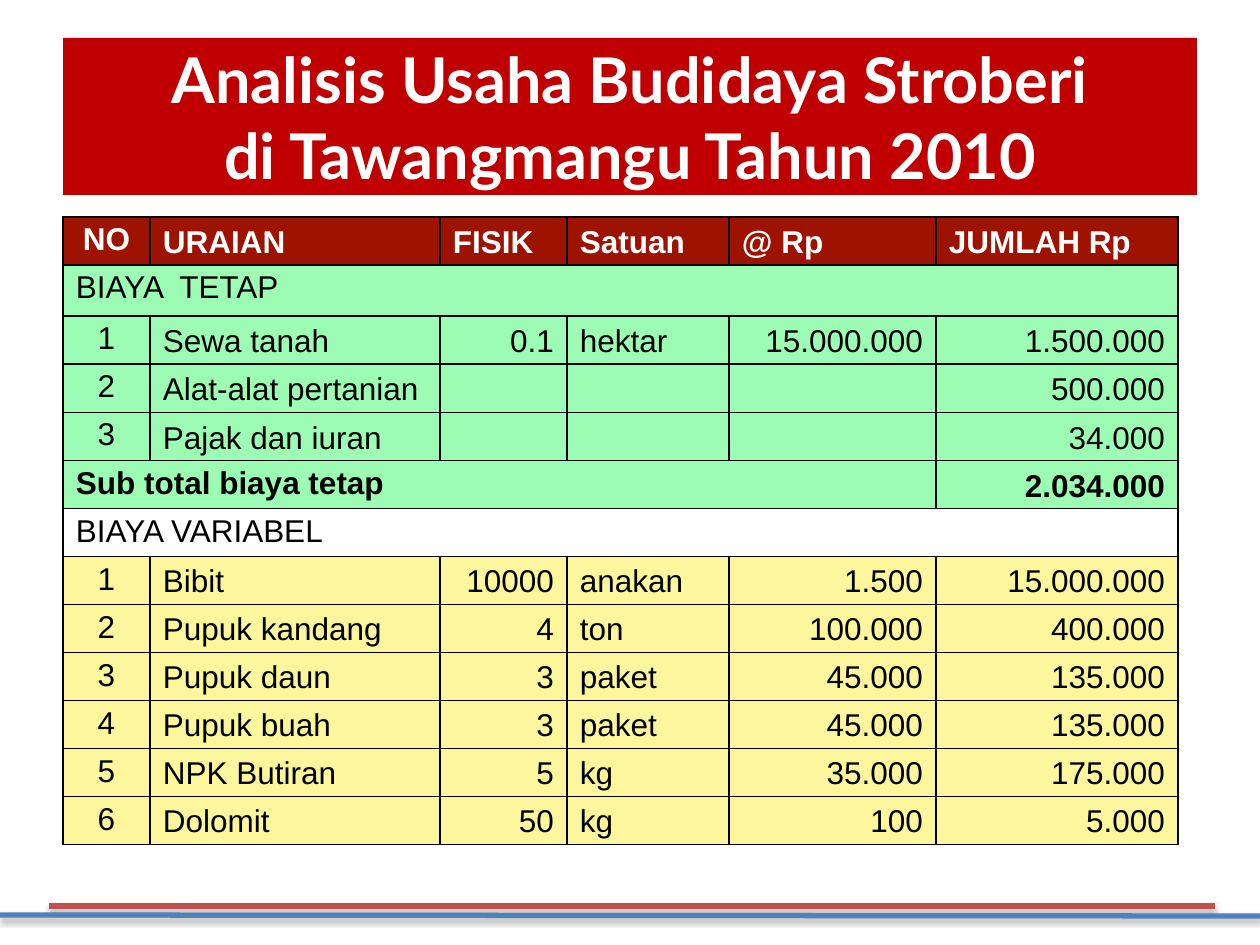
from dataclasses import dataclass

from lxml import etree
from pptx import Presentation
from pptx.dml.color import RGBColor
from pptx.enum.shapes import MSO_CONNECTOR
from pptx.enum.text import MSO_ANCHOR, PP_ALIGN
from pptx.oxml.ns import qn
from pptx.util import Emu, Pt

LEFT, CENTER, RIGHT = PP_ALIGN.LEFT, PP_ALIGN.CENTER, PP_ALIGN.RIGHT
TOP, MIDDLE, BOTTOM = MSO_ANCHOR.TOP, MSO_ANCHOR.MIDDLE, MSO_ANCHOR.BOTTOM
STRAIGHT = MSO_CONNECTOR.STRAIGHT

DARK, GREEN, YELLOW = "9E1300", "9CFCB3", "FCF79C"
BLACK, WHITE = "000000", "FFFFFF"
WIDTHS = (87, 290, 127, 162, 207, 242)
ALIGNS = (CENTER, LEFT, RIGHT, LEFT, RIGHT, RIGHT)
ROW, TALL = 48, 51
INDENT = 48


@dataclass
class Row:
    cells: tuple[str, ...]
    fill: str | None
    span: int = 1
    bold: bool = False
    ink: str = BLACK
    high: int = ROW


@dataclass
class Rule:
    x1: int
    y1: int
    x2: int
    y2: int
    color: str


ROWS = (
    Row(("NO", "URAIAN", "FISIK", "Satuan", "@ Rp", "JUMLAH Rp"), DARK, bold=True, ink=WHITE),
    Row(("BIAYA  TETAP",), GREEN, span=6, high=TALL),
    Row(("1", "Sewa tanah", "0.1", "hektar", "15.000.000", "1.500.000"), GREEN),
    Row(("2", "Alat-alat pertanian", "", "", "", "500.000"), GREEN),
    Row(("3", "Pajak dan iuran", "", "", "", "34.000"), GREEN),
    Row(("Sub total biaya tetap", "2.034.000"), GREEN, span=5, bold=True),
    Row(("BIAYA VARIABEL",), None, span=6),
    Row(("1", "Bibit", "10000", "anakan", "1.500", "15.000.000"), YELLOW),
    Row(("2", "Pupuk kandang", "4", "ton", "100.000", "400.000"), YELLOW),
    Row(("3", "Pupuk daun", "3", "paket", "45.000", "135.000"), YELLOW),
    Row(("4", "Pupuk buah", "3", "paket", "45.000", "135.000"), YELLOW),
    Row(("5", "NPK Butiran", "5", "kg", "35.000", "175.000"), YELLOW),
    Row(("6", "Dolomit", "50", "kg", "100", "5.000"), YELLOW),
)

RULES = (
    Rule(49, 906, 1215, 906, "C0504D"),
    Rule(0, 915, 1260, 916, "4F81BD"),
)


def px(num: int) -> Emu:
    return Emu(round(num * 914400 / 126))


def rgb(code: str) -> RGBColor:
    return RGBColor.from_string(code)


def style(para, face: str, size: int, ink: str, bold: bool, align) -> None:
    para.alignment = align
    for run in para.runs:
        font = run.font
        font.name, font.size, font.bold = face, Pt(size), bold
        font.color.rgb = rgb(ink)


def add_title(slide) -> None:
    title = slide.shapes.title
    title.left, title.top, title.width, title.height = px(63), px(38), px(1134), px(157)
    title.fill.solid()
    title.fill.fore_color.rgb = rgb("C00000")
    frame = title.text_frame
    frame.text = "Analisis Usaha Budidaya Stroberi\vdi Tawangmangu Tahun 2010"
    frame.vertical_anchor = MIDDLE
    style(frame.paragraphs[0], "Lato", 36, WHITE, True, CENTER)


def add_border(cell) -> None:
    """Draw a black line on all four sides; lines must come before the fill."""
    props = cell._tc.get_or_add_tcPr()
    for spot, tag in enumerate(("a:lnL", "a:lnR", "a:lnT", "a:lnB")):
        line = etree.Element(qn(tag), w=str(Pt(1)))
        fill = etree.SubElement(line, qn("a:solidFill"))
        etree.SubElement(fill, qn("a:srgbClr"), val=BLACK)
        props.insert(spot, line)


def fill_cell(cell, row: Row, text: str, align, anchor) -> None:
    cell.margin_left = cell.margin_right = px(13)
    cell.margin_top = cell.margin_bottom = px(5)
    cell.vertical_anchor = anchor
    para = cell.text_frame.paragraphs[0]
    para.text = text
    style(para, "Arial", 18, row.ink, row.bold, align)
    para.font.size = Pt(18)
    props = para._p.get_or_add_pPr()
    props.set("marL", str(px(INDENT)))
    props.set("indent", str(-px(INDENT)))


def add_costs(slide) -> None:
    high = sum(row.high for row in ROWS)
    frame = slide.shapes.add_table(
        len(ROWS), len(WIDTHS), px(63), px(217), px(sum(WIDTHS)), px(high))
    table = frame.table
    for col, wide in zip(table.columns, WIDTHS):
        col.width = px(wide)
    for r, row in enumerate(ROWS):
        table.rows[r].height = px(row.high)
        for c in range(len(WIDTHS)):
            cell = table.cell(r, c)
            if row.fill:
                cell.fill.solid()
                cell.fill.fore_color.rgb = rgb(row.fill)
            else:
                cell.fill.background()
            add_border(cell)
        if row.span > 1:
            table.cell(r, 0).merge(table.cell(r, row.span - 1))
        for i, text in enumerate(row.cells):
            c = i + row.span - 1 if i else 0
            plain = c > 0 and r == 0 or c == 0 and row.span > 1
            align = LEFT if plain else ALIGNS[c]
            fill_cell(table.cell(r, c), row, text, align, BOTTOM if c else TOP)


def add_rule(shapes, rule: Rule) -> None:
    line = shapes.add_connector(
        STRAIGHT, px(rule.x1), px(rule.y1), px(rule.x2), px(rule.y2))
    line.line.color.rgb = rgb(rule.color)
    line.line.width = Pt(3)
    effects = etree.SubElement(line._element.spPr, qn("a:effectLst"))
    shade = etree.SubElement(
        effects, qn("a:outerShdw"), blurRad=str(Pt(3.1)), dist=str(Pt(1.8)),
        dir="5400000", rotWithShape="0")
    tint = etree.SubElement(shade, qn("a:srgbClr"), val=BLACK)
    etree.SubElement(tint, qn("a:alpha"), val="35000")


def main() -> None:
    deck = Presentation()
    deck.slide_width, deck.slide_height = px(1260), px(945)
    slide = deck.slides.add_slide(deck.slide_layouts[5])
    add_title(slide)
    add_costs(slide)
    group = slide.shapes.add_group_shape()
    for rule in RULES:
        add_rule(group.shapes, rule)
    deck.save("out.pptx")


if __name__ == "__main__":
    main()
